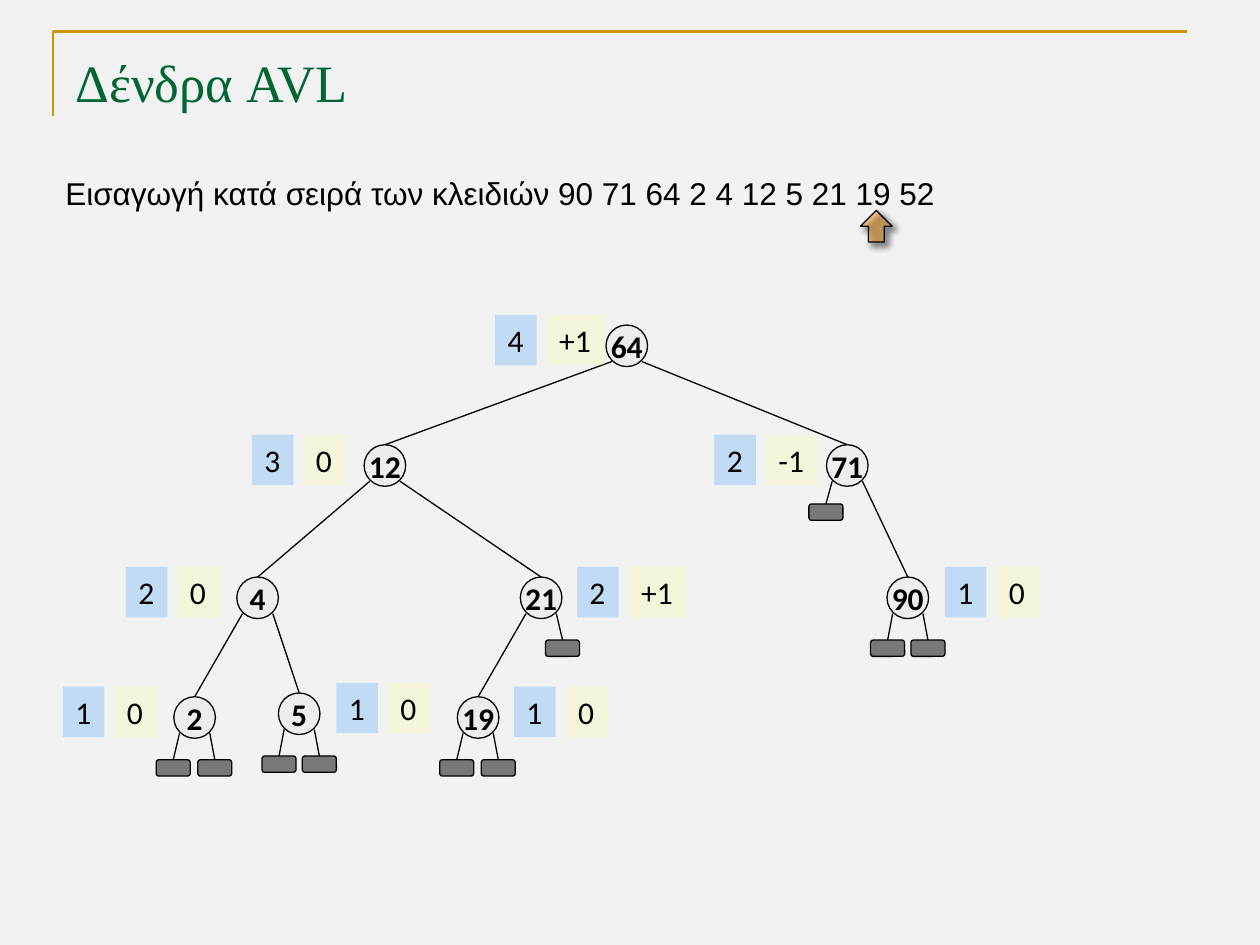
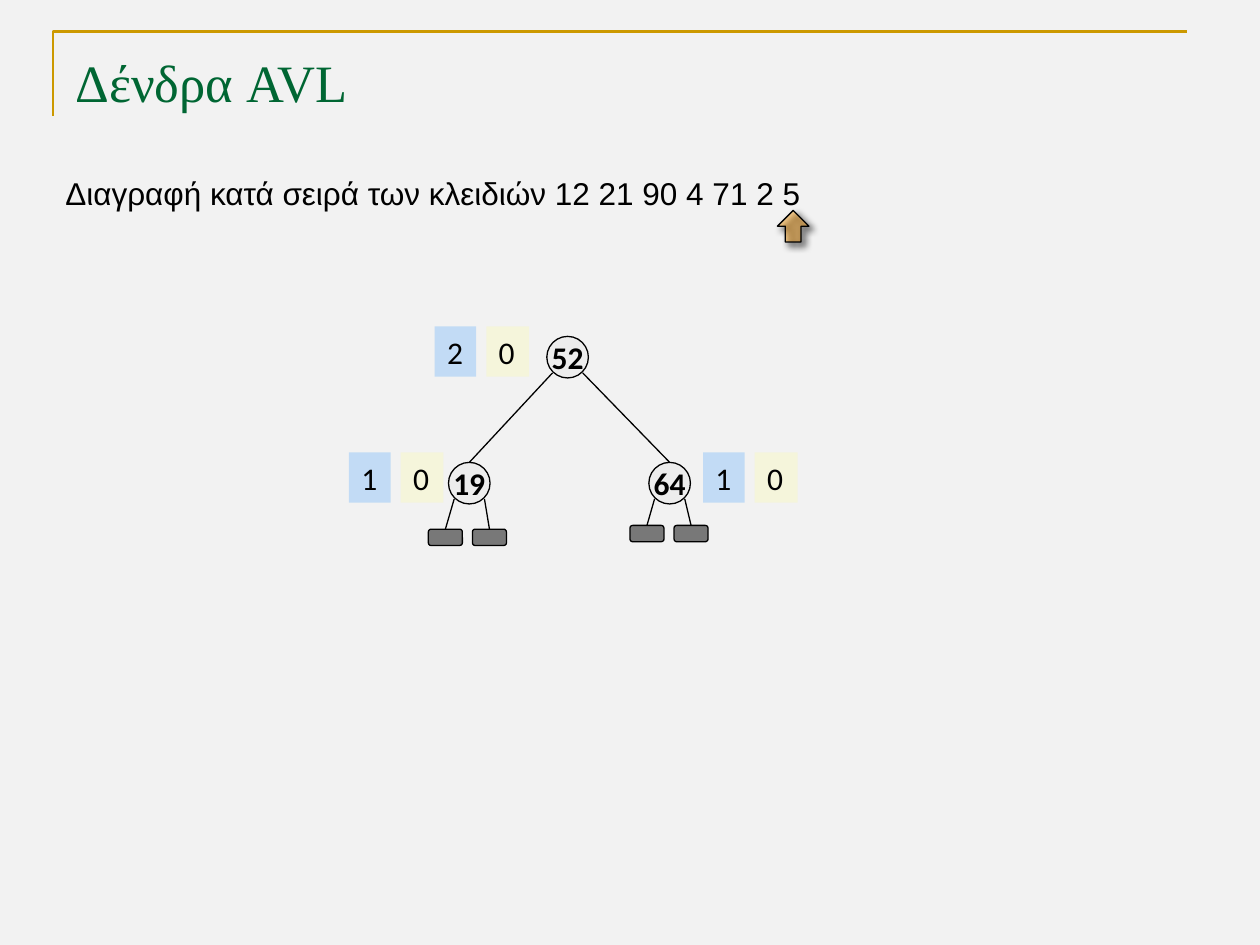
import pptx
import pptx.dml.color
import pptx.enum.shapes
import pptx.enum.text
import pptx.oxml
import pptx.oxml.ns
import pptx.util
import lxml.etree

Inches = pptx.util.Inches
Pt = pptx.util.Pt
RGBColor = pptx.dml.color.RGBColor
SHAPE = pptx.enum.shapes.MSO_SHAPE
ALIGN = pptx.enum.text.PP_ALIGN
ANCHOR = pptx.enum.text.MSO_ANCHOR
FIT = pptx.enum.text.MSO_AUTO_SIZE
qn = pptx.oxml.ns.qn

PAPER = RGBColor(0xF2, 0xF2, 0xF2)
GOLD = RGBColor(0xCC, 0x99, 0x00)
GREEN = RGBColor(0x00, 0x66, 0x33)
BLACK = RGBColor(0x00, 0x00, 0x00)
NODE_GREY = RGBColor(0xEA, 0xEA, 0xEA)
HEIGHT_BLUE = RGBColor(0x33, 0x99, 0xFF)
BALANCE_YELLOW = RGBColor(0xFF, 0xFF, 0x99)
ORANGE = RGBColor(0xFF, 0x99, 0x00)

NODE_SIZE = 0.33
EDGE_REACH = 0.12
EDGE_DROP = 0.29
CHIP_RISE = 0.08
CHIP_STEP = 0.41
CHIP_HEIGHT = 0.4
HEIGHT_WIDTH = 0.33
BALANCE_WIDTHS = {"+1": 0.46, "-1": 0.41, "0": 0.34}
LEAF_WIDTH = 0.27
LEAF_HEIGHT = 0.13

# key: left, top, height, balance, chip left, leaf lefts, leaf top
INSERTED = {
    64: (4.81, 2.58, "4", "+1", 3.93, [], 0),
    12: (2.89, 3.53, "3", "0", 2.0, [], 0),
    71: (6.56, 3.53, "2", "-1", 5.67, [6.42], 4.0),
    4: (1.88, 4.58, "2", "0", 1.0, [], 0),
    21: (4.13, 4.58, "2", "+1", 4.58, [4.33], 5.08),
    90: (7.04, 4.58, "1", "0", 7.5, [6.91, 7.23], 5.08),
    2: (1.38, 5.53, "1", "0", 0.5, [1.24, 1.57], 6.03),
    5: (2.21, 5.5, "1", "0", 2.67, [2.08, 2.4], 6.0),
    19: (3.63, 5.53, "1", "0", 4.08, [3.49, 3.82], 6.03),
}
INSERTED_EDGES = [(64, 12), (64, 71), (12, 4), (12, 21), (71, 90), (4, 2), (4, 5), (21, 19)]
DELETED = {
    52: (4.34, 2.67, "2", "0", 3.45, [], 0),
    19: (3.56, 3.67, "1", "0", 2.77, [3.4, 3.75], 4.2),
    64: (5.15, 3.67, "1", "0", 5.58, [5.0, 5.35], 4.17),
}
DELETED_EDGES = [(52, 19), (52, 64)]
SLIDES = [
    ("Εισαγωγή κατά σειρά των κλειδιών 90 71 64 2 4 12 5 21 19 52", 7.17, 6.83,
     INSERTED, INSERTED_EDGES),
    ("Διαγραφή κατά σειρά των κλειδιών 12 21 90 4 71 2 5", 6.09, 6.17,
     DELETED, DELETED_EDGES),
]


def add_block(page, kind, place, color, opacity, outlined=True):
    block = page.shapes.add_shape(kind, *[Inches(length) for length in place])
    block.shadow.inherit = False
    block.fill.solid()
    block.fill.fore_color.rgb = color
    tint = block.element.spPr.find(qn("a:solidFill")).find(qn("a:srgbClr"))
    lxml.etree.SubElement(tint, qn("a:alpha"), val=str(opacity * 1000))
    if outlined:
        block.line.color.rgb = BLACK
        block.line.width = Pt(0.75)
    else:
        block.line.fill.background()
    return block


def write(box, text, font, size, color=BLACK, bold=False, align=ALIGN.LEFT,
          anchor=ANCHOR.TOP, wrap=False, fit=FIT.NONE):
    frame = box.text_frame
    frame.word_wrap = wrap
    frame.auto_size = fit
    frame.vertical_anchor = anchor
    para = frame.paragraphs[0]
    para.alignment = align
    span = para.add_run()
    span.text = text
    span.font.name = font
    span.font.size = Pt(size)
    span.font.bold = bold
    span.font.color.rgb = color


deck = pptx.Presentation()
deck.slide_width = Inches(10)
deck.slide_height = Inches(7.5)

for task, task_width, pointer_left, nodes, edges in SLIDES:
    page = deck.slides.add_slide(deck.slide_layouts[6])
    page.background.fill.solid()
    page.background.fill.fore_color.rgb = PAPER

    outline = page.shapes.build_freeform(Inches(0.42), Inches(0.92))
    outline.add_line_segments(
        [(Inches(0.42), Inches(0.25)), (Inches(9.42), Inches(0.25))], close=False)
    corner = outline.convert_to_shape()
    corner.shadow.inherit = False
    corner.fill.background()
    corner.line.color.rgb = GOLD
    corner.line.width = Pt(1.5)

    title = page.shapes.add_textbox(Inches(0.5), Inches(0.3), Inches(9), Inches(0.53))
    title.text_frame.margin_top = Inches(0.1)
    write(title, "Δένδρα AVL", "Times New Roman", 30, GREEN, wrap=True)

    caption = page.shapes.add_textbox(
        Inches(0.42), Inches(1.33), Inches(task_width), Inches(0.4))
    write(caption, task, "Arial", 18, fit=FIT.SHAPE_TO_FIT_TEXT)

    links = []
    for parent, child in edges:
        child_left, child_top = nodes[child][:2]
        links.append((parent, child < parent, child_left + NODE_SIZE / 2, child_top))
    for key, (left, top, height, balance, chip_left, leaves, leaf_top) in nodes.items():
        for leaf_left in leaves:
            links.append((key, leaf_left < left, leaf_left + LEAF_WIDTH / 2, leaf_top))

    for parent, goes_left, end_x, end_y in links:
        left, top = nodes[parent][:2]
        start_x = left + NODE_SIZE / 2 + (-EDGE_REACH if goes_left else EDGE_REACH)
        edge = page.shapes.add_connector(
            pptx.enum.shapes.MSO_CONNECTOR.STRAIGHT,
            Inches(start_x), Inches(top + EDGE_DROP), Inches(end_x), Inches(end_y))
        edge.line.color.rgb = BLACK
        edge.line.width = Pt(0.75)
        lxml.etree.SubElement(edge.element.spPr, qn("a:effectLst"))

    for key, (left, top, height, balance, chip_left, leaves, leaf_top) in nodes.items():
        node = add_block(page, SHAPE.OVAL, (left, top, NODE_SIZE, NODE_SIZE), NODE_GREY, 60)
        write(node, str(key), "Calibri", 18, bold=True, align=ALIGN.CENTER,
              anchor=ANCHOR.MIDDLE)
        chips = [
            (balance, chip_left + CHIP_STEP, BALANCE_WIDTHS[balance], BALANCE_YELLOW),
            (height, chip_left, HEIGHT_WIDTH, HEIGHT_BLUE),
        ]
        for label, label_left, width, color in chips:
            chip = add_block(page, SHAPE.RECTANGLE,
                             (label_left, top - CHIP_RISE, width, CHIP_HEIGHT),
                             color, 25, outlined=False)
            write(chip, label, "Calibri", 18, fit=FIT.SHAPE_TO_FIT_TEXT)
        for leaf_left in leaves:
            add_block(page, SHAPE.ROUNDED_RECTANGLE,
                      (leaf_left, leaf_top, LEAF_WIDTH, LEAF_HEIGHT), BLACK, 50)

    pointer = add_block(page, SHAPE.DOWN_ARROW, (pointer_left, 1.67, 0.25, 0.25), ORANGE, 40)
    pointer.rotation = 180
    effects = pointer.element.spPr.find(qn("a:effectLst"))
    shadow = lxml.etree.SubElement(
        effects, qn("a:outerShdw"), blurRad=str(Pt(4)), dist=str(Pt(3)),
        dir=str(45 * 60000), algn="tl", rotWithShape="0")
    shade = lxml.etree.SubElement(shadow, qn("a:srgbClr"), val=str(BLACK))
    lxml.etree.SubElement(shade, qn("a:alpha"), val="40000")

deck.save("out.pptx")
